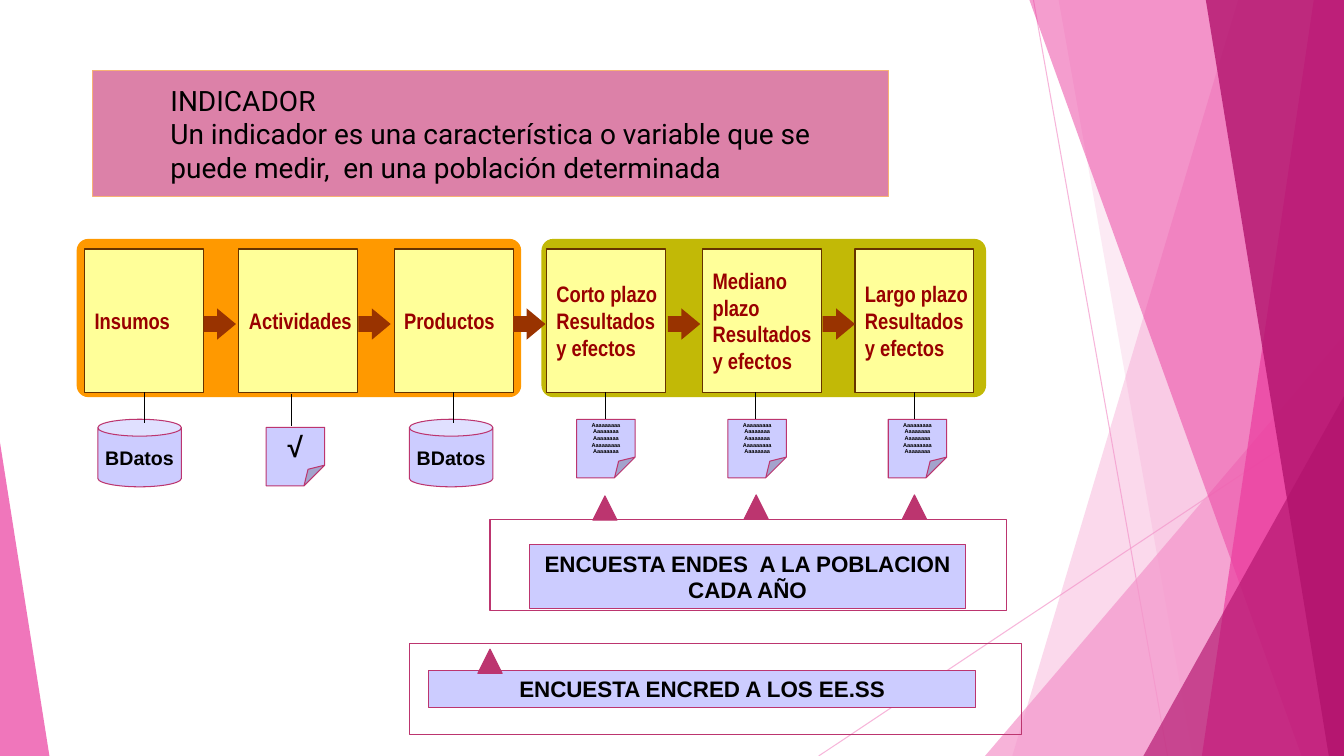
from dataclasses import dataclass
from typing import Optional

from lxml import etree
from pptx import Presentation
from pptx.dml.color import RGBColor
from pptx.enum.shapes import MSO_CONNECTOR, MSO_SHAPE
from pptx.enum.text import MSO_ANCHOR, PP_ALIGN
from pptx.oxml.ns import qn
from pptx.util import Inches, Pt

STRAIGHT = MSO_CONNECTOR.STRAIGHT
RECT = MSO_SHAPE.RECTANGLE
ROUNDED = MSO_SHAPE.ROUNDED_RECTANGLE
ARROW = MSO_SHAPE.RIGHT_ARROW
CAN = MSO_SHAPE.CAN
NOTE = MSO_SHAPE.FOLDED_CORNER
MIDDLE = MSO_ANCHOR.MIDDLE
LEFT = PP_ALIGN.LEFT
CENTER = PP_ALIGN.CENTER

WIDTH, HEIGHT = 13.33, 7.5
PALE_PINK, PINK, MAGENTA = "F496CB", "EB3D9F", "B2136D"
ROSE, LILAC, BLACK = "BC356F", "CCCCFF", "000000"
STEP_TOP, STEP_WIDTH, STEP_HEIGHT = 2.47, 1.18, 1.42
NOTE_LINES = "Aaaaaaaaa\nAaaaaaaa\nAaaaaaaa\nAaaaaaaaa\nAaaaaaaa"


@dataclass
class Style:
    size: float
    name: str
    color: str = BLACK
    bold: bool = True
    align: PP_ALIGN = CENTER
    wrap: bool = False
    inset: float = 0.1


@dataclass
class Source:
    kind: MSO_SHAPE
    adjust: float
    width: float
    height: float
    text: str
    style: Style


@dataclass
class Step:
    left: float
    label: str
    source: Source
    source_left: float
    stem_x: float
    source_top: float = 4.16
    stem_top: float = STEP_TOP + STEP_HEIGHT
    stem_end: float = 4.16


@dataclass
class Facet:
    points: list[tuple[float, float]]
    color: str
    alpha: int


@dataclass
class Survey:
    frame: tuple[float, float, float, float]
    banner: tuple[float, float, float, float]
    text: str
    pointers: list[tuple[float, float]]


TITLE = Style(20, "Roboto", bold=False, align=LEFT, wrap=True, inset=0.77)
STEP = Style(16, "Arial Narrow", "990000", align=LEFT)
SURVEY = Style(16, "Arial", wrap=True)

DATABASE = Source(CAN, 0.25, 0.83, 0.67, "BDatos", Style(14, "Arial"))
CHECK = Source(NOTE, 0.354, 0.58, 0.58, "√", Style(20, "Arial Narrow"))
REPORT = Source(NOTE, 0.354, 0.58, 0.58, NOTE_LINES, Style(4, "Arial"))

STEPS = [
    Step(0.84, "Insumos", DATABASE, 0.97, 1.43, stem_end=4.2),
    Step(2.37, "Actividades", CHECK, 2.64, 2.89, 4.24, 3.91, 4.23),
    Step(3.91, "Productos", DATABASE, 4.06, 4.5, stem_end=4.2),
    Step(5.42, "Corto plazo\nResultados\ny efectos", REPORT, 5.72, 6.01),
    Step(6.97, "Mediano\nplazo\nResultados\ny efectos", REPORT, 7.22, 7.49),
    Step(8.48, "Largo plazo\nResultados\ny efectos", REPORT, 8.81, 9.07),
]

FACETS = [
    Facet([(12.28, 0), (WIDTH, 0), (WIDTH, HEIGHT), (10.04, HEIGHT)], PALE_PINK, 36),
    Facet([(10.5, 0), (WIDTH, 0), (WIDTH, HEIGHT), (11.83, HEIGHT)], PALE_PINK, 20),
    Facet([(WIDTH, 3.33), (WIDTH, HEIGHT), (9.77, HEIGHT)], PALE_PINK, 72),
    Facet([(10.21, 0), (WIDTH, 0), (WIDTH, HEIGHT), (12.91, HEIGHT)], PINK, 50),
    Facet([(13.03, 0), (WIDTH, 0), (WIDTH, HEIGHT), (11.92, HEIGHT)], PINK, 70),
    Facet([(11.96, 0), (WIDTH, 0), (WIDTH, HEIGHT), (13.18, HEIGHT)], MAGENTA, 80),
    Facet([(WIDTH, 3.93), (WIDTH, HEIGHT), (11.34, HEIGHT)], MAGENTA, 66),
    Facet([(0, 4.39), (0.49, HEIGHT), (0, HEIGHT)], PINK, 70),
]

SURVEYS = [
    Survey((4.86, 5.15, 5.12, 0.91), (5.25, 5.4, 4.33, 0.64),
           "ENCUESTA ENDES  A LA POBLACION CADA AÑO",
           [(5.88, 4.92), (7.38, 4.91), (8.95, 4.91)]),
    Survey((4.06, 6.38, 6.07, 0.91), (4.25, 6.65, 5.43, 0.37),
           "ENCUESTA ENCRED A LOS EE.SS", [(4.74, 6.44)]),
]


def paint(fill, color: str, alpha: int = 100) -> None:
    fill.solid()
    fill.fore_color.rgb = RGBColor.from_string(color)
    if alpha < 100:
        tint = fill.fore_color._xFill.find(qn("a:srgbClr"))
        etree.SubElement(tint, qn("a:alpha"), val=str(alpha * 1000))


def finish(shape, fill: Optional[str], line: Optional[str], alpha: int = 100) -> None:
    shape.shadow.inherit = False
    if fill:
        paint(shape.fill, fill, alpha)
    else:
        shape.fill.background()
    if line:
        paint(shape.line.fill, line)
        shape.line.width = Pt(0.75)
    else:
        shape.line.fill.background()


def add_block(slide, kind: MSO_SHAPE, bounds: tuple, fill: Optional[str],
              line: Optional[str] = None, adjusts: tuple = ()):
    block = slide.shapes.add_shape(kind, *map(Inches, bounds))
    for index, value in enumerate(adjusts):
        if index < len(block.adjustments):
            block.adjustments[index] = value
        else:
            guides = block._element.spPr.find(".//" + qn("a:avLst"))
            etree.SubElement(guides, qn("a:gd"), name="adj",
                             fmla=f"val {round(value * 100000)}")
    finish(block, fill, line)
    return block


def write(shape, text: str, style: Style) -> None:
    frame = shape.text_frame
    layout = {"word_wrap": style.wrap, "vertical_anchor": MIDDLE,
              "margin_left": Inches(style.inset), "margin_right": Inches(0.1)}
    for key, value in layout.items():
        setattr(frame, key, value)
    frame.text = text
    for paragraph in frame.paragraphs:
        paragraph.alignment = style.align
        letters = {"size": Pt(style.size), "name": style.name, "bold": style.bold}
        for key, value in letters.items():
            setattr(paragraph.font, key, value)
        paint(paragraph.font.fill, style.color)


def add_line(slide, start: tuple, end: tuple, color: str, alpha: int = 100):
    line = slide.shapes.add_connector(STRAIGHT, *map(Inches, start + end))
    paint(line.line.fill, color, alpha)
    line.line.width = Pt(0.75)
    etree.SubElement(line._element.spPr, qn("a:effectLst"))
    return line


def add_facet(slide, facet: Facet) -> None:
    corners = [(Inches(x), Inches(y)) for x, y in facet.points]
    outline = slide.shapes.build_freeform(*corners[0])
    outline.add_line_segments(corners[1:], close=True)
    finish(outline.convert_to_shape(), facet.color, None, facet.alpha)


def add_step(slide, step: Step) -> None:
    box = add_block(slide, RECT, (step.left, STEP_TOP, STEP_WIDTH, STEP_HEIGHT),
                    "FFFF99", "663300")
    write(box, step.label, STEP)
    source = step.source
    bounds = (step.source_left, step.source_top, source.width, source.height)
    write(add_block(slide, source.kind, bounds, LILAC, ROSE, (source.adjust,)),
          source.text, source.style)
    stem = add_line(slide, (step.stem_x, step.stem_top),
                    (step.stem_x, step.stem_end), BLACK)
    if abs(step.left + STEP_WIDTH / 2 - step.stem_x) < 0.01:
        stem.begin_connect(box, 2)


def add_survey(slide, survey: Survey) -> None:
    add_block(slide, RECT, survey.frame, None, ROSE)
    write(add_block(slide, RECT, survey.banner, LILAC, ROSE), survey.text, SURVEY)
    for left, top in survey.pointers:
        pointer = add_block(slide, ARROW, (left, top, 0.24, 0.24), ROSE, ROSE, (0.624, 1))
        pointer.rotation = 270


def main() -> None:
    deck = Presentation()
    deck.slide_width, deck.slide_height = Inches(WIDTH), Inches(HEIGHT)
    slide = deck.slides.add_slide(deck.slide_layouts[6])
    add_line(slide, (10.25, 0), (11.58, HEIGHT), PALE_PINK, 70)
    add_line(slide, (WIDTH, 4.03), (8.12, HEIGHT), PALE_PINK, 70)
    for facet in FACETS:
        add_facet(slide, facet)
    definition = add_block(slide, RECT, (0.92, 0.7, 7.89, 1.25), "DC81A8", "F7B275")
    write(definition, "INDICADOR\nUn indicador es una característica o variable que se\n"
          "puede medir,  en una población determinada", TITLE)
    for left, color in ((0.76, "FF9900"), (5.37, "C2B906")):
        add_block(slide, ROUNDED, (left, 2.37, 4.41, 1.57), color, adjusts=(0.074,))
    for step in STEPS:
        add_step(slide, step)
    for index in range(len(STEPS) - 1):
        add_block(slide, ARROW, (2.02 + 1.535 * index, 3.06, 0.32, 0.31), "993300",
                  adjusts=(0.503, 0.602))
    for survey in SURVEYS:
        add_survey(slide, survey)
    deck.save("out.pptx")


if __name__ == "__main__":
    main()
